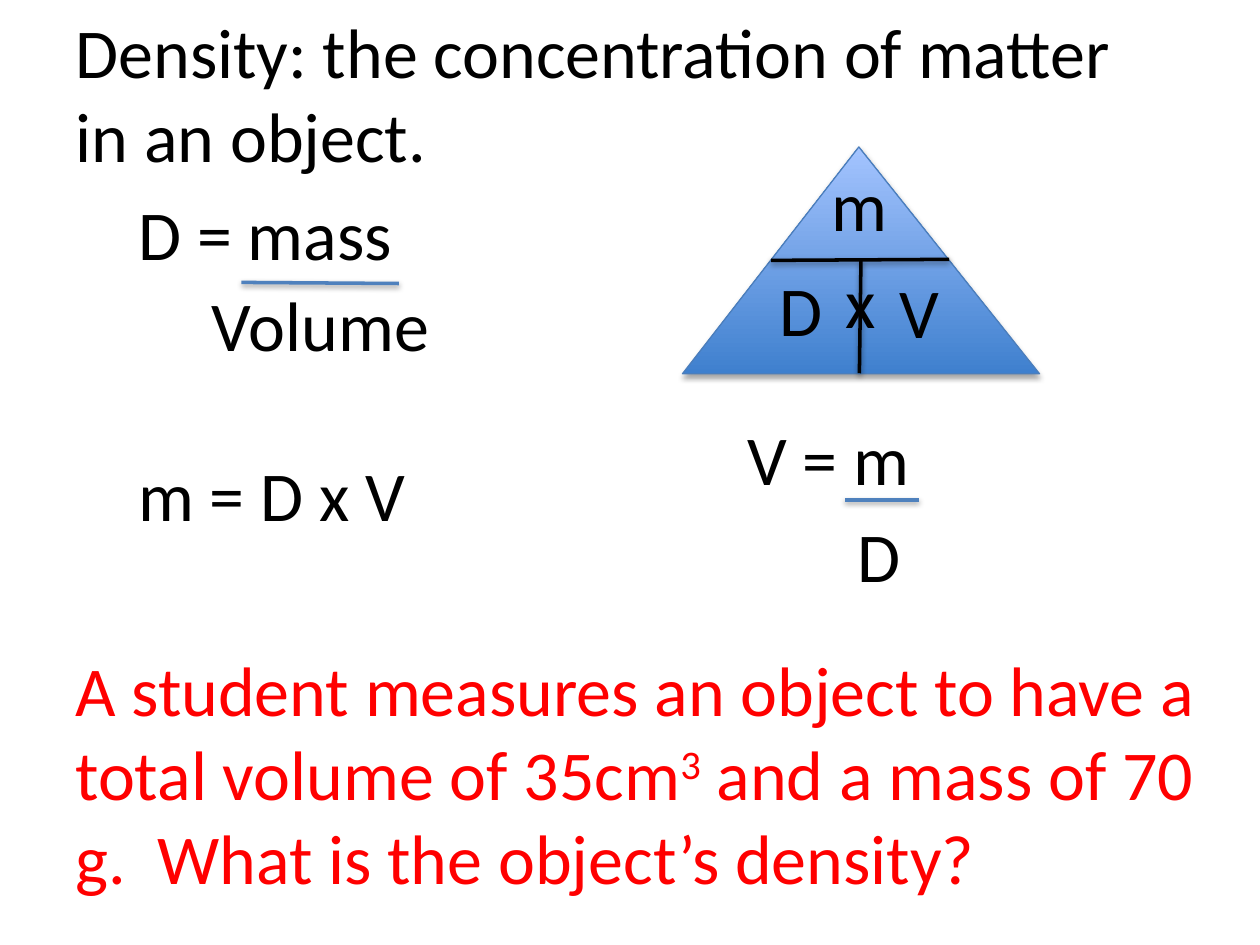
from dataclasses import dataclass

from lxml.etree import SubElement
from pptx import Presentation
from pptx.dml.color import RGBColor
from pptx.enum.shapes import MSO_CONNECTOR, MSO_SHAPE
from pptx.enum.text import MSO_ANCHOR, MSO_AUTO_SIZE, PP_ALIGN
from pptx.oxml.ns import qn
from pptx.util import Emu, Inches, Pt

COLS, ROWS = 120, 90
TEXT_ROWS = 9.25
BLACK, RED, BLUE = "000000", "FF0000", "4F81BD"
FONT, SIZE = "Calibri", 40

prs = Presentation()
prs.slide_width, prs.slide_height = Inches(10), Inches(7.5)


@dataclass
class Label:
    text: str
    col: float
    row: float
    cols: float
    align: PP_ALIGN = PP_ALIGN.LEFT


@dataclass
class Rule:
    start: tuple[float, float]
    end: tuple[float, float]
    color: str = BLUE


def x(cols: float) -> Emu:
    return Emu(round(prs.slide_width * cols / COLS))


def y(rows: float) -> Emu:
    return Emu(round(prs.slide_height * rows / ROWS))


def rgb(color: str) -> RGBColor:
    return RGBColor.from_string(color)


def add_run(p, text: str, color: str = BLACK, raised: bool = False) -> None:
    r = p.add_run()
    r.text = text
    r.font.name, r.font.size = FONT, Pt(SIZE)
    r.font.color.rgb = rgb(color)
    if raised:
        r._r.get_or_add_rPr().set("baseline", "30000")


def add_shadow(shape, alpha: int, distance: float) -> None:
    effects = SubElement(shape._element.spPr, qn("a:effectLst"))
    outer = SubElement(effects, qn("a:outerShdw"), blurRad=str(Pt(3.15)),
                       dist=str(Pt(distance)), dir="5400000", rotWithShape="0")
    color = SubElement(outer, qn("a:srgbClr"), val=BLACK)
    SubElement(color, qn("a:alpha"), val=str(alpha * 1000))


def add_box(shapes, col: float, row: float, cols: float, rows: float = TEXT_ROWS):
    tf = shapes.add_textbox(x(col), y(row), x(cols), y(rows)).text_frame
    tf.word_wrap = True
    tf.auto_size = MSO_AUTO_SIZE.SHAPE_TO_FIT_TEXT
    return tf.paragraphs[0]


def add_label(shapes, label: Label) -> None:
    p = add_box(shapes, label.col, label.row, label.cols)
    p.alignment = label.align
    add_run(p, label.text)


def add_rule(shapes, rule: Rule) -> None:
    (c1, r1), (c2, r2) = rule.start, rule.end
    line = shapes.add_connector(MSO_CONNECTOR.STRAIGHT, x(c1), y(r1), x(c2), y(r2))
    line.line.color.rgb = rgb(rule.color)
    line.line.width = Pt(2)
    add_shadow(line, 38, 1.6)


def add_triangle(shapes) -> None:
    sp = shapes.add_shape(MSO_SHAPE.ISOSCELES_TRIANGLE, x(65), y(14), x(34), y(21.6))
    sp.adjustments[0] = 0.494
    sp.fill.gradient()
    sp.fill.gradient_angle = 90
    for stop, color in zip(sp.fill.gradient_stops, ("3F80CE", "A4C4FF")):
        stop.color.rgb = rgb(color)
    sp.line.color.rgb = rgb("4B7EBC")
    sp.line.width = Pt(0.75)
    add_shadow(sp, 35, 1.8)


DENSITY = [
    Label("D = mass", 12, 17.6, 33),
    Rule((23, 26.9), (38, 27)),
    Label("Volume", 19, 26.25, 29),
]
VOLUME = [
    Label("V = m", 70, 39, 29),
    Rule((80.5, 47.6), (87.5, 47.6)),
    Label("D", 80.5, 48.2, 6.5),
]
TRIANGLE = [
    Rule((73.45, 24.8), (90.4, 24.7), BLACK),
    Rule((81.85, 35.55), (82, 24.8), BLACK),
    Label("V", 84.5, 25, 10.6),
    Label("D", 73.1, 24.8, 10.6),
    Label("m", 78, 14.75, 10.6),
    Label("x", 78, 24, 8, PP_ALIGN.CENTER),
]


def add_parts(shapes, parts: list) -> None:
    for part in parts:
        if isinstance(part, Rule):
            add_rule(shapes, part)
        else:
            add_label(shapes, part)


def add_title(s) -> None:
    title = s.shapes.title
    title.left, title.top, title.width, title.height = x(6), y(0.25), x(105), y(17.4)
    tf = title.text_frame
    tf.word_wrap = True
    tf.auto_size = MSO_AUTO_SIZE.SHAPE_TO_FIT_TEXT
    tf.vertical_anchor = MSO_ANCHOR.TOP
    p = tf.paragraphs[0]
    p.alignment = PP_ALIGN.LEFT
    add_run(p, "Density: the concentration of matter in an object.")


def main() -> None:
    s = prs.slides.add_slide(prs.slide_layouts[5])
    add_title(s)
    add_parts(s.shapes.add_group_shape().shapes, DENSITY)

    question = add_box(s.shapes, 6, 61, 109, 25.4)
    add_run(question, "A student measures an object to have a total volume of 35cm", RED)
    add_run(question, "3", RED, raised=True)
    add_run(question, " and a mass of 70 g.  What is the object’s density?", RED)

    add_label(s.shapes, Label("m = D x V", 12, 42.4, 29))
    add_parts(s.shapes.add_group_shape().shapes, VOLUME)

    triangle = s.shapes.add_group_shape().shapes
    add_triangle(triangle)
    add_parts(triangle, TRIANGLE)
    prs.save("out.pptx")


if __name__ == "__main__":
    main()
